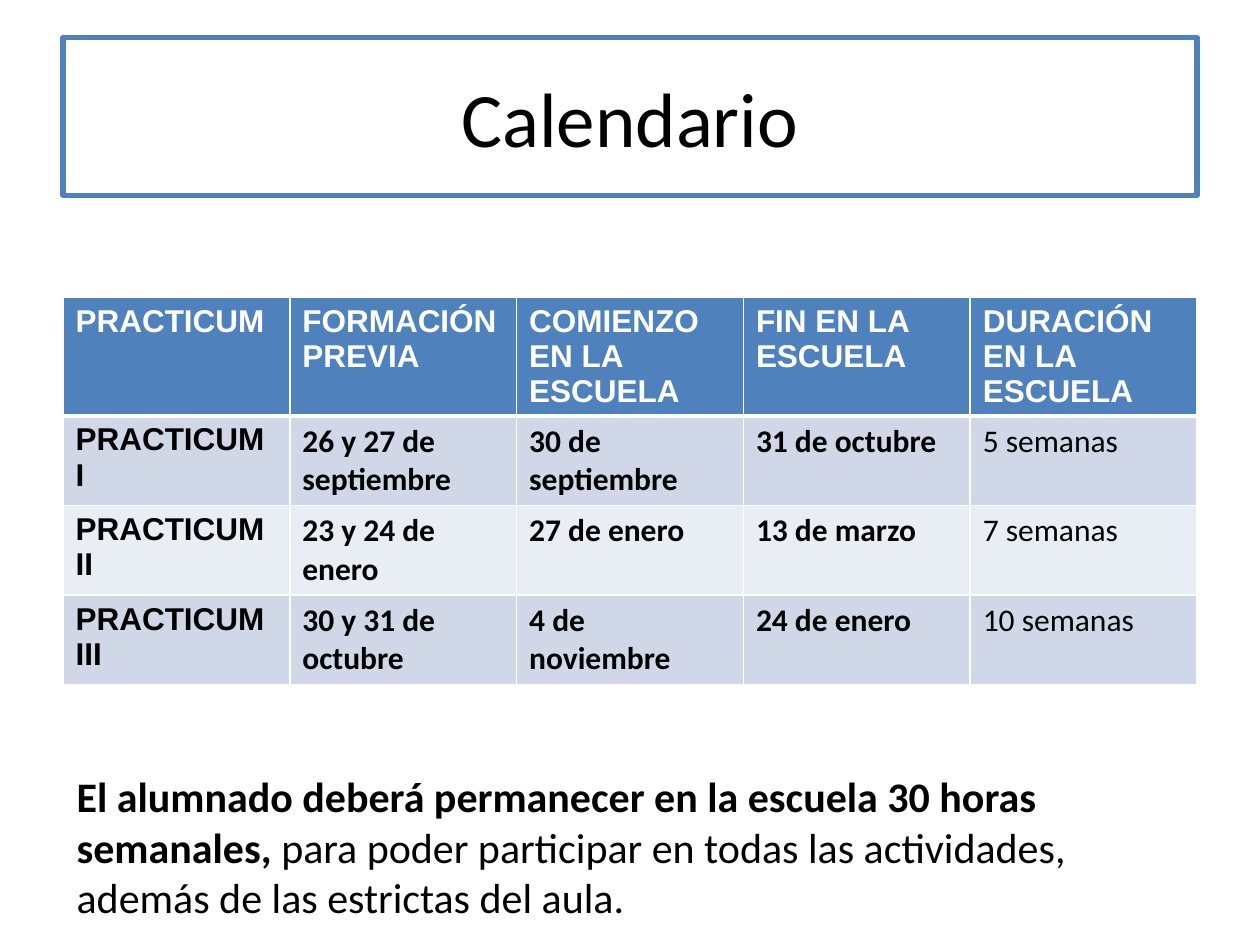
from pptx import Presentation
from pptx.dml.color import RGBColor
from pptx.enum.shapes import MSO_SHAPE as SHAPE
from pptx.enum.text import MSO_ANCHOR as ANCHOR, MSO_AUTO_SIZE as AUTO, PP_ALIGN as ALIGN
from pptx.util import Pt
from lxml import etree
from pptx.oxml.ns import qn

BLUE = RGBColor(0x4F, 0x81, 0xBD)
BAND_DARK = RGBColor(0xD0, 0xD8, 0xE8)
BAND_LIGHT = RGBColor(0xE9, 0xED, 0xF4)
WHITE = RGBColor(0xFF, 0xFF, 0xFF)
BLACK = RGBColor(0, 0, 0)


def add_text(p, text, size=18, font="Calibri", color=BLACK, bold=False):
    r = p.add_run()
    r.text = text
    r.font.size = Pt(size)
    r.font.name = font
    r.font.bold = bold
    r.font.color.rgb = color


def add_border(cell, side, width):
    tc_pr = cell._tc.get_or_add_tcPr()
    ln = etree.SubElement(tc_pr, qn(f"a:ln{side}"), w=str(Pt(width)))
    fill = etree.SubElement(ln, qn("a:solidFill"))
    etree.SubElement(fill, qn("a:srgbClr"), val=str(WHITE))


prs = Presentation()
prs.slide_width, prs.slide_height = Pt(720), Pt(540)
s = prs.slides.add_slide(prs.slide_layouts[6])

# Framed title
sp = s.shapes.add_shape(SHAPE.RECTANGLE, Pt(36), Pt(21.6), Pt(648), Pt(90))
sp.shadow.inherit = False
sp.fill.background()
sp.line.color.rgb = BLUE
sp.line.width = Pt(3)
tf = sp.text_frame
tf.word_wrap = True
tf.vertical_anchor = ANCHOR.MIDDLE
p = tf.paragraphs[0]
p.alignment = ALIGN.CENTER
add_text(p, "Calendario", size=44)

# Calendar table
rows = [
    ["PRACTICUM", "FORMACIÓN PREVIA", "COMIENZO EN LA ESCUELA",
     "FIN EN LA ESCUELA", "DURACIÓN EN LA ESCUELA"],
    ["PRACTICUM I", "26 y 27 de septiembre", "30 de septiembre",
     "31 de octubre", "5 semanas"],
    ["PRACTICUM II", "23 y 24 de enero", "27 de enero",
     "13 de marzo", "7 semanas"],
    ["PRACTICUM III", "30 y 31 de octubre", "4 de noviembre",
     "24 de enero", "10 semanas"],
]
row_heights = [67.5, 51.2, 51.2, 51.2]
table = s.shapes.add_table(4, 5, Pt(36), Pt(170), Pt(648), Pt(sum(row_heights))).table

for i, (row, height) in enumerate(zip(rows, row_heights)):
    table.rows[i].height = Pt(height)
    header = i == 0
    band = BLUE if header else BAND_DARK if i % 2 else BAND_LIGHT
    for j, text in enumerate(row):
        cell = table.cell(i, j)
        for side in "LRTB":
            thick = (header and side == "B") or (i == 1 and side == "T")
            add_border(cell, side, 3 if thick else 1)
        cell.fill.solid()
        cell.fill.fore_color.rgb = band
        add_text(cell.text_frame.paragraphs[0], text,
                 font="Arial" if header or j == 0 else "Calibri",
                 color=WHITE if header else BLACK,
                 bold=header or j < 4)

# Note on weekly hours
tf = s.shapes.add_textbox(Pt(36.7), Pt(437), Pt(646.6), Pt(94.3)).text_frame
tf.word_wrap = True
tf.auto_size = AUTO.SHAPE_TO_FIT_TEXT
p = tf.paragraphs[0]
add_text(p, "El alumnado deberá permanecer en la escuela 30 horas semanales, ",
         size=24, bold=True)
add_text(p, "para poder participar en todas las actividades, "
            "además de las estrictas del aula.", size=24)

prs.save("out.pptx")
